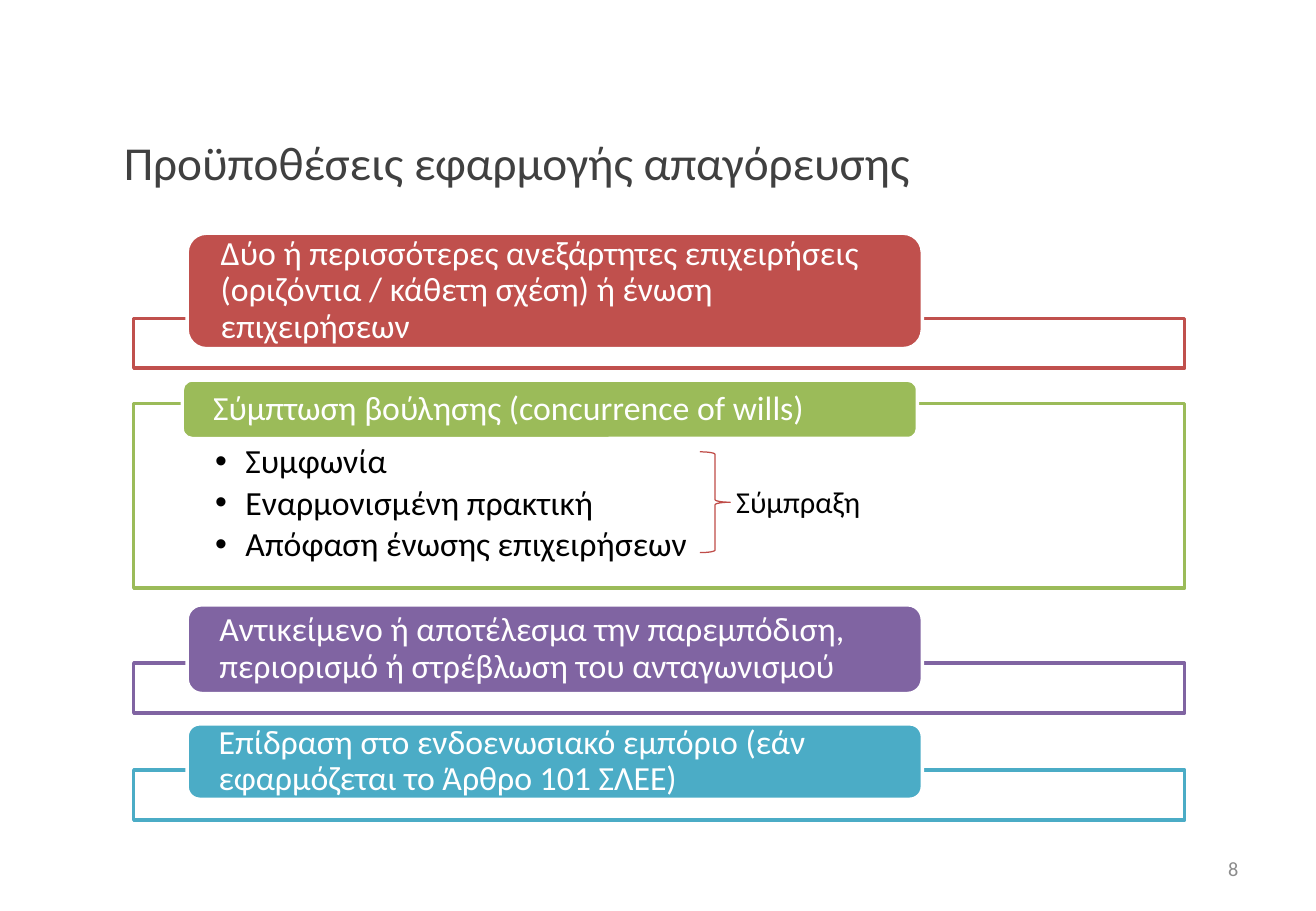
from lxml import etree
from pptx import Presentation
from pptx.dml.color import RGBColor
from pptx.enum.shapes import MSO_SHAPE
from pptx.enum.text import MSO_ANCHOR, PP_ALIGN
from pptx.oxml.ns import qn
from pptx.util import Emu, Pt

RECT, ROUND, BRACE = MSO_SHAPE.RECTANGLE, MSO_SHAPE.ROUNDED_RECTANGLE, MSO_SHAPE.RIGHT_BRACE
TOP, MIDDLE = MSO_ANCHOR.TOP, MSO_ANCHOR.MIDDLE
LEFT, RIGHT = PP_ALIGN.LEFT, PP_ALIGN.RIGHT

FONT = "Calibri"
WHITE, BLACK = "FFFFFF", "000000"
LABEL_INSETS = (23, 0, 23, 0)
BODY_INSETS = (67, 34, 67, 16)
TEXT_INSETS = (10, 5, 10, 5)
BULLET_INDENT = 25

FRAME_X, FRAME_W, LABEL_W = 110, 865, 605
CONDITIONS = [
    ("C0504D", (262, 41), (154, 192, 95),
     "Δύο ή περισσότερες ανεξάρτητες επιχειρήσεις (οριζόντια / κάθετη σχέση) ή ένωση επιχειρήσεων", []),
    ("9BBB59", (332, 152), (150, 313, 48),
     "Σύμπτωση βούλησης (concurrence of wills)",
     ["Συμφωνία", "Εναρμονισμένη πρακτική", "Απόφαση ένωσης επιχειρήσεων"]),
    ("8064A2", (546, 41), (154, 498, 73),
     "Αντικείμενο ή αποτέλεσμα την παρεμπόδιση, περιορισμό ή στρέβλωση του ανταγωνισμού", []),
    ("4BACC6", (634, 41), (154, 596, 62),
     "Επίδραση στο ενδοενωσιακό εμπόριο (εάν εφαρμόζεται το Άρθρο 101 ΣΛΕΕ)", []),
]


def px(n):
    return Emu(n * 9144)


def rgb(color):
    return RGBColor.from_string(color)


def add_shape(s, kind, box, fill, line, weight=2):
    sp = s.shapes.add_shape(kind, *map(px, box))
    sp.shadow.inherit = False
    if fill:
        sp.fill.solid()
        sp.fill.fore_color.rgb = rgb(fill)
    else:
        sp.fill.background()
    sp.line.color.rgb = rgb(line)
    sp.line.width = Pt(weight)
    return sp


def set_frame(sp, insets, anchor, wrap=True):
    tf = sp.text_frame
    tf.word_wrap = wrap
    tf.vertical_anchor = anchor
    tf.margin_left, tf.margin_top, tf.margin_right, tf.margin_bottom = map(px, insets)
    return tf


def add_run(p, text, size, color, align=LEFT):
    p.alignment = align
    r = p.add_run()
    r.text = text
    r.font.name = FONT
    r.font.size = Pt(size)
    r.font.color.rgb = rgb(color)


def add_bullet(p):
    pPr = p._p.get_or_add_pPr()
    pPr.set("marL", str(px(BULLET_INDENT)))
    pPr.set("indent", str(-px(BULLET_INDENT)))
    etree.SubElement(pPr, qn("a:buFont")).set("typeface", "Arial")
    etree.SubElement(pPr, qn("a:buChar")).set("char", "•")


def add_text(s, box, text, size, color, align=LEFT, anchor=MIDDLE, wrap=True):
    sp = s.shapes.add_textbox(*map(px, box))
    tf = set_frame(sp, TEXT_INSETS, anchor, wrap)
    add_run(tf.paragraphs[0], text, size, color, align)


def add_condition(s, color, frame, label, heading, items):
    y, h = frame
    sp = add_shape(s, RECT, (FRAME_X, y, FRAME_W, h), WHITE, color)
    solid = sp.fill._xPr.find(qn("a:solidFill"))
    etree.SubElement(solid[0], qn("a:alpha")).set("val", "90000")
    tf = set_frame(sp, BODY_INSETS, TOP)
    for i, item in enumerate(items):
        p = tf.paragraphs[0] if i == 0 else tf.add_paragraph()
        add_bullet(p)
        p.line_spacing = 0.9
        p.space_after = Pt(3)
        add_run(p, item, 20, BLACK)

    x, y, h = label
    sp = add_shape(s, ROUND, (x, y, LABEL_W, h), color, WHITE)
    p = set_frame(sp, LABEL_INSETS, MIDDLE).paragraphs[0]
    p.line_spacing = 0.9
    add_run(p, heading, 20, WHITE)


def add_summary(s, x, y, w, h):
    add_shape(s, BRACE, (x, y, w, h), None, "BF4C48", 0.75)
    add_text(s, (x + w - 5, y + h // 2 - 20, 123, 40), "Σύμπραξη", 18, BLACK, anchor=TOP, wrap=False)


def main():
    prs = Presentation()
    prs.slide_width, prs.slide_height = px(1083), px(750)
    s = prs.slides.add_slide(prs.slide_layouts[6])
    add_text(s, (92, 85, 958, 96), "Προϋποθέσεις εφαρμογής απαγόρευσης", 28, "404040")
    for condition in CONDITIONS:
        add_condition(s, *condition)
    add_text(s, (776, 695, 253, 40), "8", 12, "8C8C8C", RIGHT)
    add_summary(s, 576, 372, 25, 83)
    prs.save("out.pptx")


if __name__ == "__main__":
    main()
